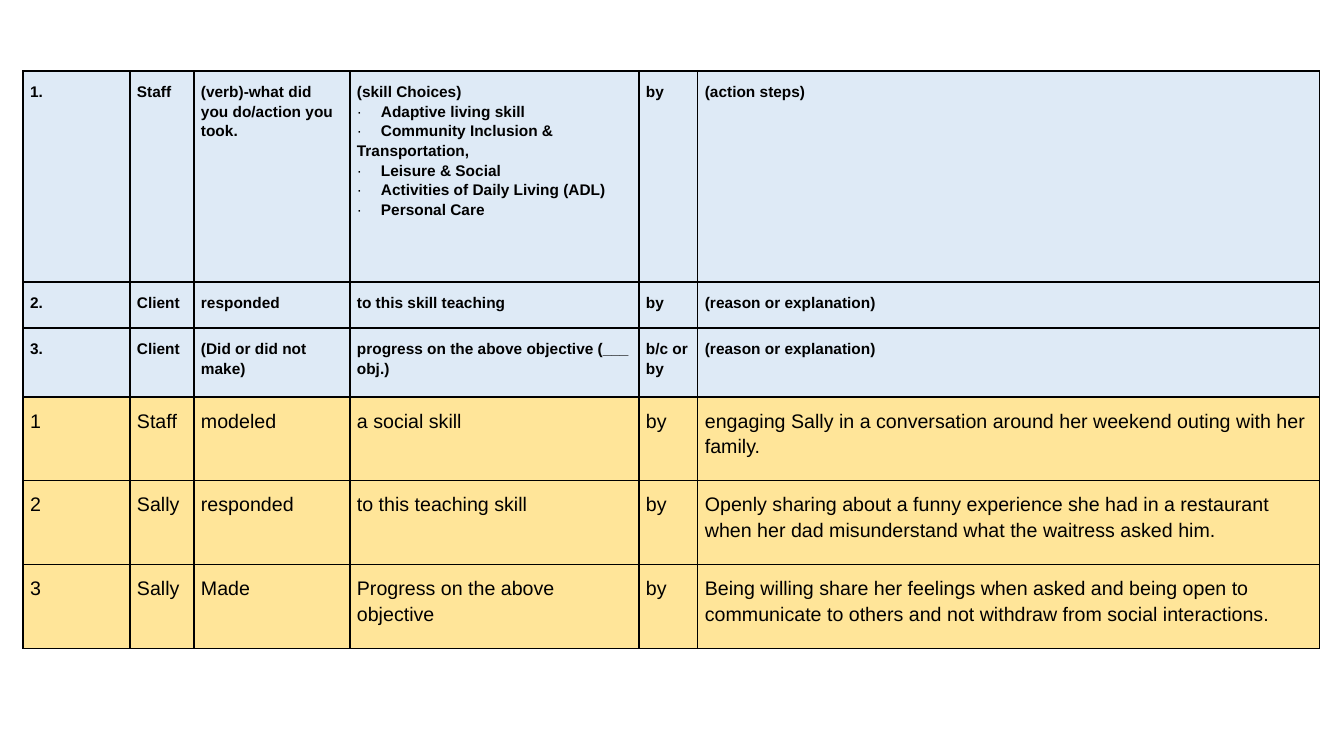
from lxml.etree import SubElement
from pptx import Presentation
from pptx.dml.color import RGBColor
from pptx.oxml import parse_xml
from pptx.oxml.ns import nsdecls, qn
from pptx.util import Pt

EMU_PER_PX = 914400 / 100.8
COLORS = {"guide": "DEEAF6", "example": "FFE599", "ink": "000000"}
FORMATS = {
    "guide": {"name": "Arial", "size": Pt(11), "bold": True},
    "example": {"name": "Arial", "size": Pt(14), "bold": False},
}
MARGINS = {"margin_left": 7, "margin_right": 7, "margin_top": 10, "margin_bottom": 10}
COLUMN_WIDTHS = [107, 64, 156, 289, 59, 622]
ROW_HEIGHTS = [211, 46, 69, 84, 84, 84]
SKILL_TAB = 24

SKILLS = [
    "(skill Choices)",
    "·\tAdaptive living skill",
    "·\tCommunity Inclusion & Transportation,",
    "·\tLeisure & Social",
    "·\tActivities of Daily Living (ADL)",
    "·\tPersonal Care",
]
ROWS = [
    ("guide", ["1.", "Staff", "(verb)-what did you do/action you took.",
               "\n".join(SKILLS), "by", "(action steps)"]),
    ("guide", ["2.", "Client", "responded", "to this skill teaching", "by",
               "(reason or explanation)"]),
    ("guide", ["3.", "Client", "(Did or did not make)",
               "progress on the above objective (___ obj.)", "b/c or by",
               "(reason or explanation)"]),
    ("example", ["1", "Staff", "modeled", "a social skill", "by",
                 "engaging Sally in a conversation around her weekend outing "
                 "with her family."]),
    ("example", ["2", "Sally", "responded", "to this teaching skill", "by",
                 "Openly sharing about a funny experience she had in a restaurant "
                 "when her dad misunderstand what the waitress asked him."]),
    ("example", ["3", "Sally", "Made", "Progress on the above objective", "by",
                 "Being willing share her feelings when asked and being open to "
                 "communicate to others and not withdraw from social interactions."]),
]


def px(length):
    return round(length * EMU_PER_PX)


def add_borders(cell):
    properties = cell._tc.get_or_add_tcPr()
    for index, side in enumerate(["lnL", "lnR", "lnT", "lnB"]):
        properties.insert(index, parse_xml(
            f'<a:{side} {nsdecls("a")} w="{Pt(1)}"><a:solidFill>'
            f'<a:srgbClr val="{COLORS["ink"]}"/></a:solidFill></a:{side}>'))


presentation = Presentation()
presentation.slide_width = px(1344)
presentation.slide_height = px(756)
slide = presentation.slides.add_slide(presentation.slide_layouts[6])

# Table grid
frame = slide.shapes.add_table(
    len(ROWS), len(COLUMN_WIDTHS), px(23), px(71),
    px(sum(COLUMN_WIDTHS)), px(sum(ROW_HEIGHTS)))
table = frame.table
for column, width in zip(table.columns, COLUMN_WIDTHS):
    column.width = px(width)
for row, height in zip(table.rows, ROW_HEIGHTS):
    row.height = px(height)

# Note-writing guide above, worked example below
for row, (kind, texts) in zip(table.rows, ROWS):
    for cell, text in zip(row.cells, texts):
        cell.fill.solid()
        cell.fill.fore_color.rgb = RGBColor.from_string(COLORS[kind])
        add_borders(cell)
        for side, margin in MARGINS.items():
            setattr(cell, side, px(margin))
        cell.text = text
        for paragraph in cell.text_frame.paragraphs:
            paragraph.line_spacing = 1.15
            if paragraph.text.startswith("·"):
                # Plain dot, then the bold skill at a tab stop
                skill = paragraph.text[1:]
                paragraph.runs[0].text = "·"
                paragraph.add_run().text = skill
                tabs = SubElement(paragraph._p.get_or_add_pPr(), qn("a:tabLst"))
                SubElement(tabs, qn("a:tab"), pos=str(px(SKILL_TAB)), algn="l")
            for run in paragraph.runs:
                for name, value in FORMATS[kind].items():
                    setattr(run.font, name, value)
                run.font.color.rgb = RGBColor.from_string(COLORS["ink"])
                if run.text == "·":
                    run.font.bold = False

presentation.save("out.pptx")
